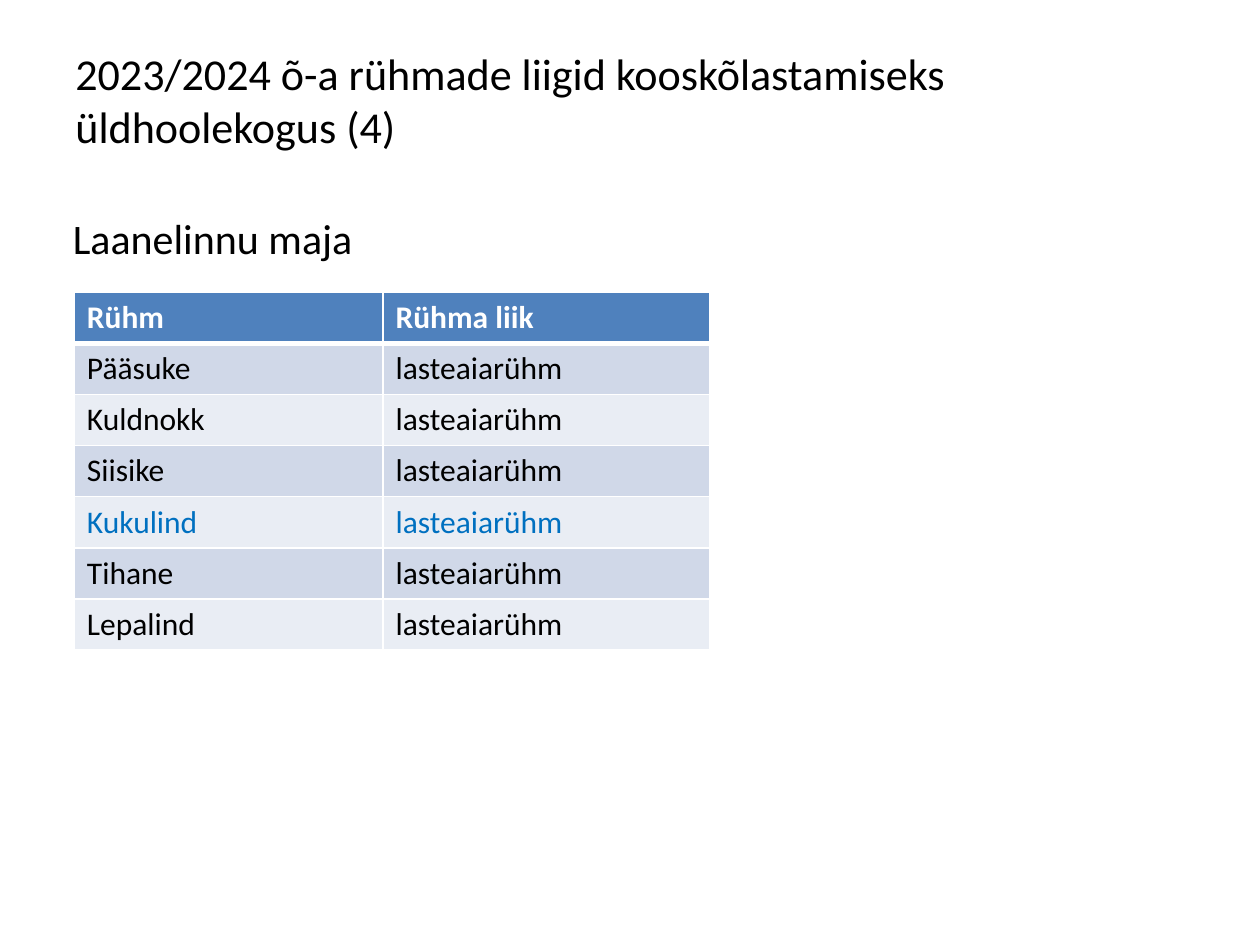
from dataclasses import dataclass

from lxml import etree
from pptx import Presentation
from pptx import util as u
from pptx.dml.color import RGBColor
from pptx.enum import text
from pptx.oxml import ns


@dataclass(frozen=True)
class Theme:
    font: str = "Calibri"
    title_size: float = 25.2
    body_size: float = 24
    table_size: float = 18
    ink: str = "000000"
    white: str = "FFFFFF"
    accent: str = "0070C0"
    header: str = "4F81BD"
    bands: tuple = ("D0D8E8", "E9EDF4")


def write(tf, content, *, size, color, font, bold=False):
    """Put one formatted run into the first paragraph of a text frame."""
    r = tf.paragraphs[0].add_run()
    r.text = content
    r.font.name = font
    r.font.size = u.Pt(size)
    r.font.bold = bold
    r.font.color.rgb = RGBColor.from_string(color)


class SlideBuilder:
    def __init__(self, slide, theme):
        self.s = slide
        self.theme = theme

    def text_box(self, content, left, top, width, height, size,
                 anchor=text.MSO_ANCHOR.TOP):
        box = [u.Inches(v) for v in (left, top, width, height)]
        tf = self.s.shapes.add_textbox(*box).text_frame
        tf.word_wrap = True
        tf.vertical_anchor = anchor
        write(tf, content, size=size, color=self.theme.ink, font=self.theme.font)

    def cell_borders(self, cell, bottom=1):
        tc_pr = cell._tc.get_or_add_tcPr()
        widths = {"a:lnL": 1, "a:lnR": 1, "a:lnT": 1, "a:lnB": bottom}
        for i, (tag, width) in enumerate(widths.items()):
            ln = etree.Element(ns.qn(tag), w=str(u.Pt(width)))
            fill = etree.SubElement(ln, ns.qn("a:solidFill"))
            etree.SubElement(fill, ns.qn("a:srgbClr"), val=self.theme.white)
            tc_pr.insert(i, ln)

    def table(self, rows, left, top, col_widths, height, highlight):
        t = self.theme
        table = self.s.shapes.add_table(
            len(rows), len(col_widths), u.Inches(left), u.Inches(top),
            u.Inches(sum(col_widths)), u.Inches(height)).table
        for col, width in zip(table.columns, col_widths):
            col.width = u.Inches(width)
        for i, row in enumerate(rows):
            is_header = i == 0
            if is_header:
                fill, color = t.header, t.white
            else:
                fill = t.bands[(i - 1) % 2]
                color = t.accent if row[0] == highlight else t.ink
            for j, content in enumerate(row):
                cell = table.cell(i, j)
                cell.fill.solid()
                cell.fill.fore_color.rgb = RGBColor.from_string(fill)
                self.cell_borders(cell, bottom=3 if is_header else 1)
                write(cell.text_frame, content, size=t.table_size,
                      color=color, font=t.font, bold=is_header)


def main():
    prs = Presentation()
    prs.slide_width, prs.slide_height = u.Inches(10), u.Inches(7.5)
    theme = Theme()
    slide = SlideBuilder(prs.slides.add_slide(prs.slide_layouts[6]), theme)

    # Title and house name
    slide.text_box("2023/2024 õ-a rühmade liigid kooskõlastamiseks üldhoolekogus (4)",
                   0.5, 0.3, 9, 0.98, theme.title_size, text.MSO_ANCHOR.MIDDLE)
    slide.text_box("Laanelinnu maja", 0.48, 1.64, 9, 0.55, theme.body_size)

    # Groups and their type
    groups = ["Pääsuke", "Kuldnokk", "Siisike", "Kukulind", "Tihane", "Lepalind"]
    rows = [("Rühm", "Rühma liik")] + [(g, "lasteaiarühm") for g in groups]
    slide.table(rows, 0.59, 2.32, (2.45, 2.59), 2.84, highlight="Kukulind")

    prs.save("out.pptx")


if __name__ == "__main__":
    main()
